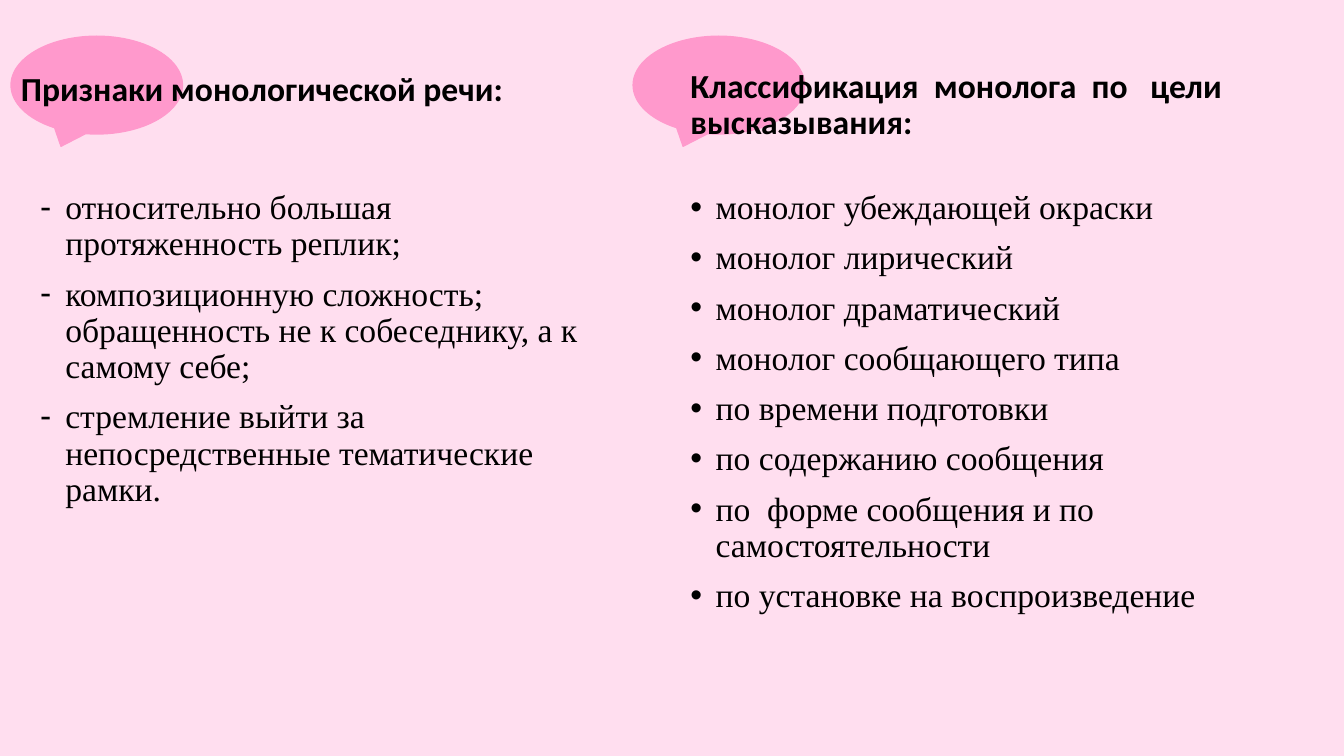
from lxml import etree
from pptx import Presentation
from pptx import util as u
from pptx.dml.color import RGBColor
from pptx.enum import shapes, text
from pptx.oxml.ns import qn

PINK = RGBColor(0xFF, 0x99, 0xCC)
PALE = RGBColor(0xFF, 0xDE, 0xEF)
BLACK = RGBColor(0, 0, 0)
SCALE = 9144

SIGNS = [
    "относительно большая протяженность реплик;",
    "композиционную сложность; обращенность не к собеседнику, а к самому себе;",
    "стремление выйти за непосредственные тематические рамки.",
]
KINDS = [
    "монолог убеждающей окраски",
    "монолог лирический",
    "монолог драматический",
    "монолог сообщающего типа",
    "по времени подготовки",
    "по содержанию сообщения",
    "по  форме сообщения и по самостоятельности",
    "по установке на воспроизведение",
]


def px(n):
    return u.Emu(n * SCALE)


def write(para, words, font="Times New Roman", size=24, bold=False, mark=None):
    para.line_spacing = 0.9
    para.space_before = u.Pt(10)
    run = para.add_run()
    run.text = words
    face = run.font
    face.name, face.size, face.bold = font, u.Pt(size), bold
    face.color.rgb = BLACK
    if mark:
        props = para._p.get_or_add_pPr()
        props.set("marL", str(px(25)))
        props.set("indent", str(px(-25)))
        etree.SubElement(props, qn("a:buFont")).set("typeface", "Arial")
        etree.SubElement(props, qn("a:buChar")).set("char", mark)


class Deck:
    """Holds the style and the current slide."""

    def __init__(self, wide, high):
        self.prs = Presentation()
        self.prs.slide_width, self.prs.slide_height = px(wide), px(high)
        self.slide = self.prs.slides.add_slide(self.prs.slide_layouts[6])
        fill = self.slide.background.fill
        fill.solid()
        fill.fore_color.rgb = PALE

    def bubble(self, x, y, w, h):
        kind = shapes.MSO_SHAPE.OVAL_CALLOUT
        shape = self.slide.shapes.add_shape(kind, px(x), px(y), px(w), px(h))
        shape.shadow.inherit = False
        shape.fill.solid()
        shape.fill.fore_color.rgb = PINK
        shape.line.color.rgb = PINK
        shape.line.width = u.Pt(1)

    def block(self, x, y, w, h, lines, low=False, **style):
        box = self.slide.shapes.add_textbox(px(x), px(y), px(w), px(h))
        frame = box.text_frame
        frame.word_wrap = True
        anchor = text.MSO_ANCHOR
        frame.vertical_anchor = anchor.BOTTOM if low else anchor.TOP
        for i, line in enumerate(lines):
            para = frame.add_paragraph() if i else frame.paragraphs[0]
            write(para, line, **style)

    def head(self, x, y, w, words):
        self.block(x, y, w, 90, [words], low=True, font="Calibri", bold=True)

    def list(self, x, w, lines, mark):
        self.block(x, 184, w, 403, lines, mark=mark)


def main():
    deck = Deck(1333, 750)
    for x in (628, 11):
        deck.bubble(x, 36, 170, 97)
    deck.head(11, 23, 564, "Признаки монологической речи:")
    deck.list(30, 564, SIGNS, "-")
    deck.head(675, 56, 567, "Классификация  монолога  по   цели   высказывания:")
    deck.list(675, 567, KINDS, "•")
    deck.prs.save("out.pptx")


if __name__ == "__main__":
    main()
